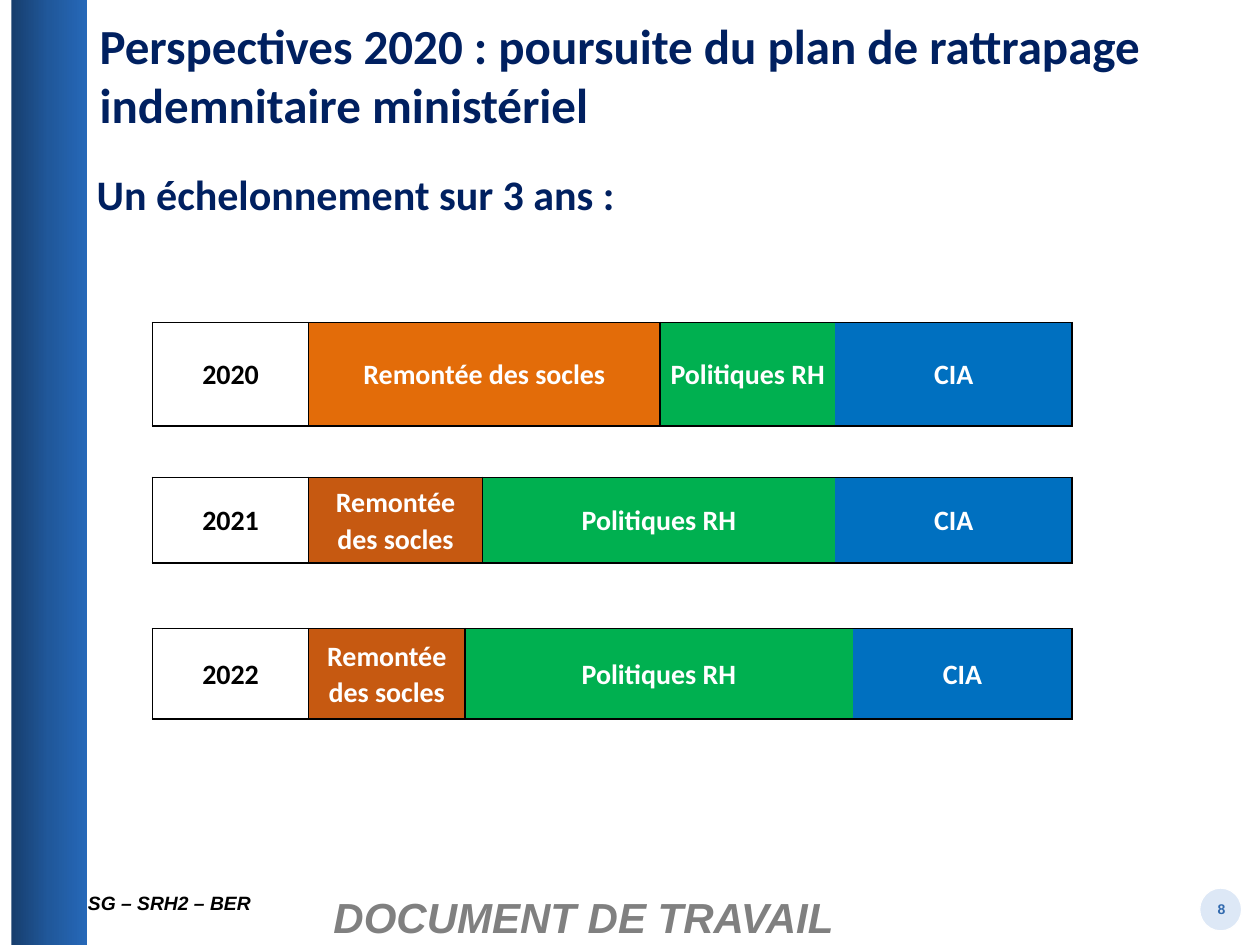
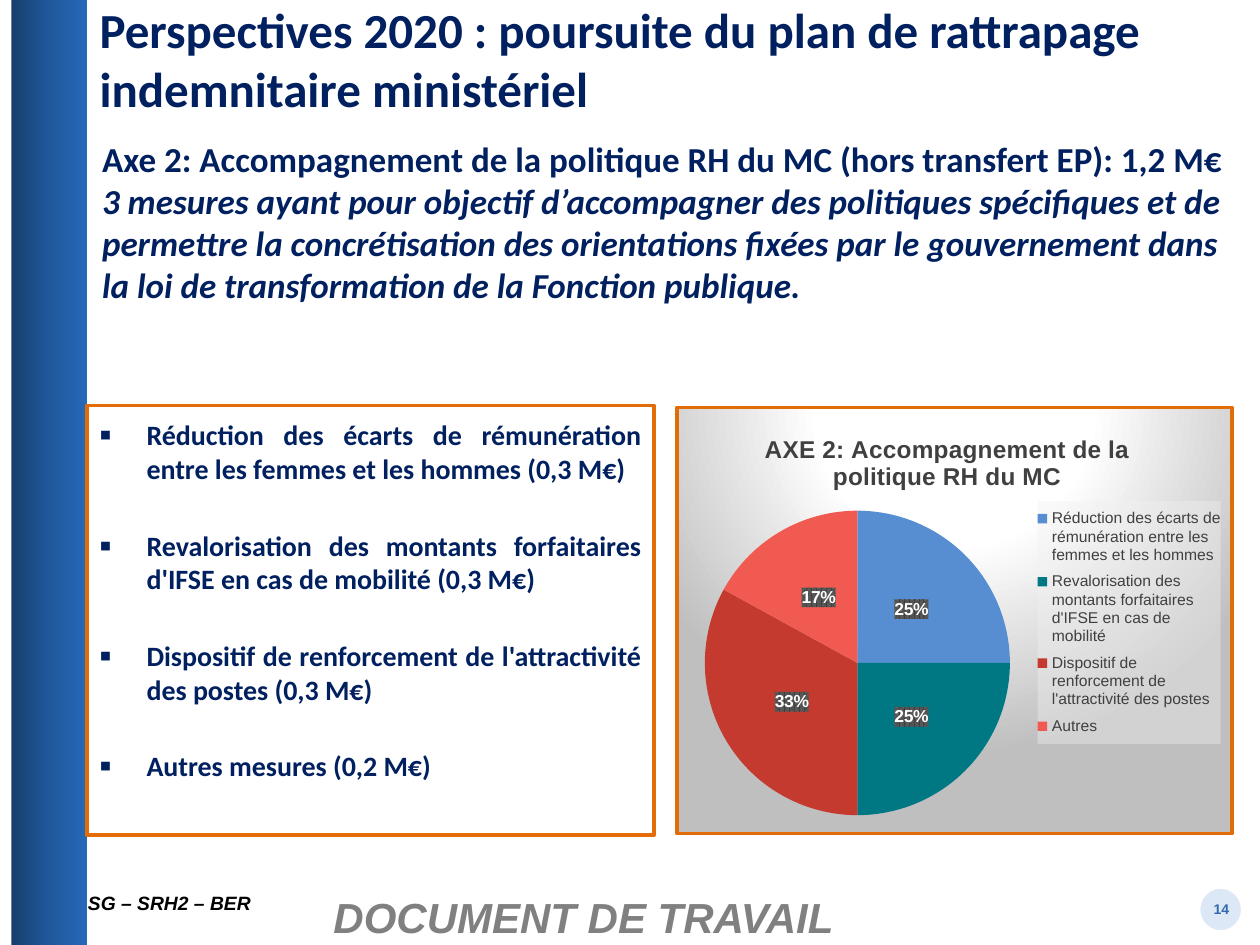
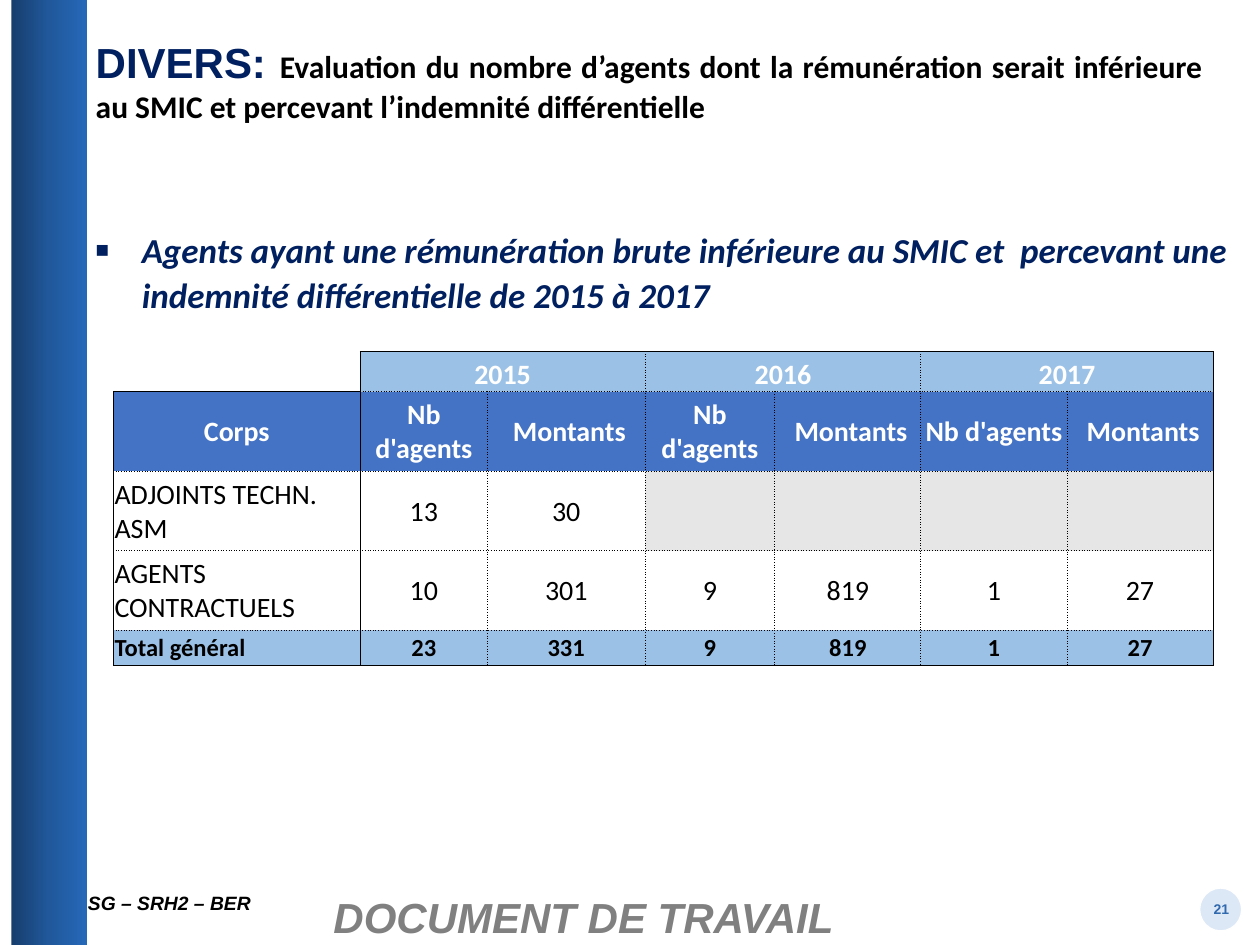
from lxml.etree import SubElement
from pptx import Presentation
from pptx.chart.data import CategoryChartData
from pptx.dml.color import RGBColor
from pptx.enum.chart import XL_CHART_TYPE, XL_LABEL_POSITION, XL_LEGEND_POSITION
from pptx.enum.shapes import MSO_SHAPE
from pptx.enum.text import MSO_ANCHOR, MSO_AUTO_SIZE, PP_ALIGN
from pptx.oxml import parse_xml
from pptx.oxml.ns import nsdecls, qn
from pptx.util import Pt

# Colours
NAVY = RGBColor(0x00, 0x20, 0x60)
BLACK = RGBColor(0x00, 0x00, 0x00)
WHITE = RGBColor(0xFF, 0xFF, 0xFF)
GREY = RGBColor(0x80, 0x80, 0x80)
DARK = RGBColor(0x40, 0x40, 0x40)
MIST = RGBColor(0xE7, 0xE6, 0xE6)
DISC = RGBColor(0xDD, 0xE8, 0xF6)
PAGE = RGBColor(0x30, 0x69, 0xAE)
ORANGE = RGBColor(0xE3, 0x6C, 0x09)
RUST = RGBColor(0xC6, 0x59, 0x11)
GREEN = RGBColor(0x00, 0xB0, 0x50)
BLUE = RGBColor(0x00, 0x70, 0xC0)
SKY = RGBColor(0x9B, 0xC2, 0xE6)
ROYAL = RGBColor(0x44, 0x72, 0xC4)
SLICES = [RGBColor(0x57, 0x8E, 0xD1), RGBColor(0x00, 0x78, 0x84),
          RGBColor(0xC4, 0x3A, 0x2F), RGBColor(0xF0, 0x5A, 0x50)]
BAND = [(0, RGBColor(0x17, 0x3E, 0x6D)), (50, RGBColor(0x20, 0x58, 0x9B)),
        (100, RGBColor(0x26, 0x68, 0xB8))]
GLOW = [(0, WHITE), (39, WHITE), (100, RGBColor(0xBF, 0xBF, 0xBF))]

PLAIN = "{2D5ABB26-0587-4C30-8999-92F81FD0307C}"
LEFT, MID, JUST = PP_ALIGN.LEFT, PP_ALIGN.CENTER, PP_ALIGN.JUSTIFY
HEAD = "Perspectives 2020 : poursuite du plan de rattrapage indemnitaire ministériel"


# Text
def write(frame, *paras, font="Calibri", size=16, color=NAVY, bold=True,
          italic=False, align=LEFT, line=None, after=0, left=0, hang=0,
          bullet=None):
    """Each paragraph is a string or a list of (text, changes) runs."""
    for i, para in enumerate(paras):
        p = frame.paragraphs[0] if i == 0 else frame.add_paragraph()
        p.alignment, p.space_before, p.space_after = align, Pt(0), Pt(after)
        if line:
            p.line_spacing = line
        runs = [(para, {})] if isinstance(para, str) else para
        for text, diff in runs:
            run = p.add_run()
            run.text = text
            look = {"font": font, "size": size, "color": color,
                    "bold": bold, "italic": italic, **diff}
            run.font.name, run.font.size = look["font"], Pt(look["size"])
            run.font.bold, run.font.italic = look["bold"], look["italic"]
            run.font.color.rgb = look["color"]
        props = p._p.get_or_add_pPr()
        props.set("marL", str(Pt(left)))
        props.set("indent", str(Pt(-hang)))
        if bullet:
            tint = SubElement(props, qn("a:buClr"))
            SubElement(tint, qn("a:srgbClr"), val=str(color))
            SubElement(props, qn("a:buSzPct"), val="125000")
            SubElement(props, qn("a:buFont"), typeface="Arial")
            SubElement(props, qn("a:buChar"), char=bullet)
        else:
            SubElement(props, qn("a:buNone"))


# XML helpers
def blend(stops, tail):
    marks = "".join(f'<a:gs pos="{pos * 1000}"><a:srgbClr val="{tone}"/></a:gs>'
                    for pos, tone in stops)
    return f'<a:gradFill {nsdecls("a")}><a:gsLst>{marks}</a:gsLst>{tail}</a:gradFill>'


def paint(node, inner):
    """Give a chart part its fill, just before its text format."""
    node.find(qn("c:txPr")).addprevious(
        parse_xml(f'<c:spPr {nsdecls("c", "a")}>{inner}</c:spPr>'))


def place(node, index, **spots):
    """Set a manual layout, in parts of the chart's size."""
    for old in node.findall(qn("c:layout")):
        node.remove(old)
    layout = parse_xml(f'<c:layout {nsdecls("c")}><c:manualLayout/></c:layout>')
    inner = layout[0]
    if "w" in spots and node.tag == qn("c:plotArea"):
        SubElement(inner, qn("c:layoutTarget"), val="inner")
    for key in "xy":
        SubElement(inner, qn(f"c:{key}Mode"), val="edge")
    for key, val in spots.items():
        SubElement(inner, qn(f"c:{key}"), val=str(val))
    node.insert(index, layout)


def edge(cell, width, **sides):
    """Draw cell borders: L, R, T, B = dash name."""
    props = cell._tc.get_or_add_tcPr()
    for side in "LRTB":
        if side in sides:
            ln = SubElement(props, qn(f"a:ln{side}"), w=str(Pt(width)))
            fill = SubElement(ln, qn("a:solidFill"))
            SubElement(fill, qn("a:srgbClr"), val=str(BLACK))
            SubElement(ln, qn("a:prstDash"), val=sides[side])


def tint(cell, color):
    if color is None:
        cell.fill.background()
    else:
        cell.fill.solid()
        cell.fill.fore_color.rgb = color


class Deck:
    def __init__(self):
        self.prs = Presentation()
        self.prs.slide_width, self.prs.slide_height = Pt(720), Pt(540)
        self.slide = None

    def start(self, layout, page):
        """Add a slide with its band and footer."""
        self.slide = self.prs.slides.add_slide(self.prs.slide_layouts[layout])
        self.shape(MSO_SHAPE.OVAL, (685.5, 507.5, 24, 24.5), DISC, WHITE, 0.75)
        num = self.text((684.5, 511, 27, 17), page, font="Arial", size=8,
                        color=PAGE, align=MID)
        num.margin_left = num.margin_right = Pt(3.6)
        band = self.shape(MSO_SHAPE.RECTANGLE, (6.5, 0, 43.2, 540))
        band.element.spPr.insert(2, parse_xml(blend(BAND, '<a:lin ang="0"/>')))
        foot = {"font": "Arial", "italic": True}
        self.text((43.2, 506, 155, 21), "SG – SRH2 – BER", size=11,
                  color=BLACK, **foot)
        self.text((183.5, 506, 385, 36), "DOCUMENT DE TRAVAIL", size=24,
                  color=GREY, **foot)

    def shape(self, kind, area, fill=None, line=None, width=1):
        item = self.slide.shapes.add_shape(kind, *map(Pt, area))
        item.shadow.inherit = False
        if fill is not None:
            item.fill.solid()
            item.fill.fore_color.rgb = fill
        if line is None:
            item.line.fill.background()
        else:
            item.line.color.rgb, item.line.width = line, Pt(width)
        return item

    def text(self, area, *paras, **fmt):
        frame = self.slide.shapes.add_textbox(*map(Pt, area)).text_frame
        frame.word_wrap = True
        write(frame, *paras, **fmt)
        return frame

    def holder(self, item, area, *paras, anchor=MSO_ANCHOR.TOP, top=3.6, **fmt):
        item.left, item.top, item.width, item.height = map(Pt, area)
        frame = item.text_frame
        frame.auto_size = MSO_AUTO_SIZE.NONE
        frame.word_wrap, frame.vertical_anchor = True, anchor
        frame.margin_top = Pt(top)
        write(frame, *paras, **fmt)

    def title(self, area, *paras, **fmt):
        self.holder(self.slide.shapes.title, area, *paras, **fmt)

    def body(self, area, *paras, **fmt):
        self.holder(self.slide.placeholders[1], area, *paras, **fmt)

    def table(self, left, top, cols, rows, pads):
        frame = self.slide.shapes.add_table(
            len(rows), len(cols), Pt(left), Pt(top), Pt(sum(cols)), Pt(sum(rows)))
        for tag in frame.element.iter(qn("a:tableStyleId")):
            tag.text = PLAIN
        grid = frame.table
        grid.first_row = grid.horz_banding = False
        for col, width in zip(grid.columns, cols):
            col.width = Pt(width)
        for row, height in zip(grid.rows, rows):
            row.height = Pt(height)
        for cell in grid.iter_cells():
            (cell.margin_left, cell.margin_right,
             cell.margin_top, cell.margin_bottom) = map(Pt, pads)
            cell.vertical_anchor = MSO_ANCHOR.MIDDLE
        return grid

    def pie(self, area, head, parts):
        data = CategoryChartData()
        data.categories = list(parts)
        data.add_series("Series 1", list(parts.values()))
        chart = self.slide.shapes.add_chart(
            XL_CHART_TYPE.PIE, *map(Pt, area), data).chart
        chart.font.name, chart.font.size = "Arial", Pt(10)
        chart.font.color.rgb = BLACK
        write(chart.chart_title.text_frame, head, font="Arial", size=14,
              color=DARK, align=MID)
        chart.chart_title.include_in_layout = False
        # Slices and labels
        plot = chart.plots[0]
        plot.vary_by_categories = True
        for i, color in enumerate(SLICES):
            fill = plot.series[0].points[i].format.fill
            fill.solid()
            fill.fore_color.rgb = color
        tags = plot.series[0].data_labels
        tags.show_percentage, tags.show_value = True, False
        tags.number_format, tags.number_format_is_linked = "0%", False
        tags.position = XL_LABEL_POSITION.CENTER
        tags.font.name, tags.font.size, tags.font.bold = "Arial", Pt(10), True
        tags.font.color.rgb = WHITE
        # Legend
        chart.has_legend = True
        key = chart.legend
        key.position, key.include_in_layout = XL_LEGEND_POSITION.RIGHT, False
        key.font.name, key.font.size = "Arial", Pt(9)
        key.font.color.rgb = DARK
        # Fills and places
        root = chart.element
        paint(root, blend(GLOW, '<a:path path="circle"><a:fillToRect l="50000" '
                          't="-80000" r="50000" b="180000"/></a:path>')
              + f'<a:ln w="{Pt(2)}"><a:solidFill><a:srgbClr val="{ORANGE}"/>'
              '</a:solidFill></a:ln>')
        paint(key.element if hasattr(key, "element") else key._element,
              '<a:solidFill><a:srgbClr val="F2F2F2"><a:alpha val="39000"/>'
              '</a:srgbClr></a:solidFill>')
        paint(next(root.iter(qn("c:dLbls"))),
              f'<a:pattFill prst="pct75"><a:fgClr><a:srgbClr val="{DARK}"/></a:fgClr>'
              '<a:bgClr><a:srgbClr val="595959"/></a:bgClr></a:pattFill>')
        place(next(root.iter(qn("c:title"))), 1, x=0.15, y=0.05)
        place(next(root.iter(qn("c:plotArea"))), 0, x=0.05, y=0.24, w=0.55, h=0.72)
        place(next(root.iter(qn("c:legend"))), 1, x=0.65, y=0.22, w=0.33, h=0.57)


def plan(deck):
    """Three-year schedule."""
    deck.start(5, "8")
    deck.title((49.7, 9, 638, 67), HEAD, size=28, anchor=MSO_ANCHOR.MIDDLE)
    deck.text((48.2, 90, 651.6, 57), "Un échelonnement sur 3 ans :", size=24,
              align=JUST, line=1.1)
    grid = deck.table(87.1, 184.3,
                      [89.3, 79.2, 7.9, 7.9, 63.4, 38.2, 8.6, 90, 8.6, 125.3],
                      [59, 29.5, 49, 37.4, 51.8], (3.6, 3.6, 0, 0))
    names = ["Remontée des socles", "Politiques RH", "CIA"]
    years = [("2020", ORANGE, (1, 5, 2, 2)), ("2021", RUST, (1, 3, 4, 2)),
             ("2022", RUST, (1, 2, 6, 1))]
    for i, (year, base, spans) in enumerate(years):
        col = 0
        fills = [None, base, GREEN, BLUE]
        for name, fill, span in zip([year] + names, fills, spans):
            cell = grid.cell(2 * i, col)
            if span > 1:
                cell.merge(grid.cell(2 * i, col + span - 1))
            sides = {"T": "solid", "B": "solid"}
            if col < 2:
                sides["L"] = "solid"
            if col == 0 or col + span == 10:
                sides["R"] = "solid"
            edge(cell, 1, **sides)
            tint(cell, fill)
            write(cell.text_frame, name, align=MID, line=1.07,
                  color=WHITE if col else BLACK)
            col += span


def axis(deck):
    """Second axis: measures and their shares."""
    deck.start(1, "14")
    deck.title((49.7, 0, 648, 67), HEAD, size=28, anchor=MSO_ANCHOR.MIDDLE)
    deck.body((46.8, 75, 662.4, 443.5), [
        ("Axe 2: Accompagnement de la politique RH du MC (hors transfert EP): 1,2 M€", {}),
        (" 3 mesures\u00a0ayant pour objectif d’accompagner des politiques spécifiques "
         "et de permettre la concrétisation des orientations fixées par le gouvernement "
         "dans la loi de transformation de la Fonction publique.", {"italic": True}),
    ], size=20, left=4.3)
    panel = deck.shape(MSO_SHAPE.RECTANGLE, (49.7, 231.8, 324, 245.5),
                       WHITE, ORANGE, 2)
    deck.holder(panel, (49.7, 231.8, 324, 245.5),
                "Réduction des écarts de rémunération entre les femmes et les hommes (0,3 M€)",
                "Revalorisation des montants forfaitaires d'IFSE en cas de mobilité (0,3 M€)",
                "Dispositif de renforcement de l'attractivité des postes (0,3 M€)",
                "Autres mesures (0,2 M€)",
                top=7, align=JUST, after=24.7, left=27, hang=27, bullet="▪")
    deck.pie((385.9, 231.8, 319, 245.5),
             "AXE 2: Accompagnement de la politique RH du MC",
             {"Réduction des écarts de rémunération entre les femmes et les hommes": 25,
              "Revalorisation des montants forfaitaires d'IFSE en cas de mobilité": 25,
              "Dispositif de renforcement de l'attractivité des postes": 33,
              "Autres": 17})


def staff(deck):
    """Staff paid below the minimum wage."""
    deck.start(1, "21")
    deck.title((47.5, 17.3, 647.3, 58.3), [
        ("DIVERS: ", {"font": "Arial", "size": 24, "color": NAVY}),
        ("Evaluation du nombre d’agents dont la rémunération serait inférieure "
         "au SMIC et percevant l’indemnité différentielle", {}),
    ], size=18, color=BLACK, align=JUST)
    deck.body((46.8, 87.8, 666.7, 440),
              "Agents ayant une rémunération brute inférieure au SMIC et  percevant "
              "une indemnité différentielle de 2015 à 2017",
              top=41, size=20, italic=True, line=1.07, left=27, hang=27, bullet="▪")
    grid = deck.table(64.8, 200.9, [141.1, 72.7, 90, 74.2, 83.5, 83.5, 83.5],
                      [23, 45.4, 45.4, 45.4, 20.2], (0.7, 0.7, 0.7, 0))
    rows = [["", "2015", "", "2016", "", "2017", ""],
            ["Corps"] + ["Nb d'agents", " Montants"] * 3,
            ["ADJOINTS TECHN. ASM", "13", "30", "", "", "", ""],
            ["AGENTS CONTRACTUELS", "10", "301", "9", "819", "1", "27"],
            ["Total général", "23", "331", "9", "819", "1", "27"]]
    fills = [SKY, ROYAL, None, None, SKY]
    for col in (1, 3, 5):
        grid.cell(0, col).merge(grid.cell(0, col + 1))
    for r, row in enumerate(rows):
        for c, word in enumerate(row):
            cell = grid.cell(r, c)
            if cell.is_spanned:
                continue
            corner = r == c == 0
            last = c + cell.span_width - 1 if cell.is_merge_origin else c
            solid = {"L": c < 2, "R": last in (0, 6),
                     "T": r == 0 or (r, c) == (1, 0), "B": r == 4 or corner}
            edge(cell, 0.5, **{side: "solid" if on else "dot"
                               for side, on in solid.items()
                               if not (corner and side in "LT")})
            blank = r == 2 and not word
            tint(cell, None if corner else MIST if blank else fills[r])
            if r == 0:
                cell.vertical_anchor = MSO_ANCHOR.BOTTOM
            if word:
                write(cell.text_frame, word, size=14 if r == 4 else 16,
                      color=WHITE if r < 2 else BLACK, bold=r not in (2, 3),
                      align=LEFT if c == 0 and r > 1 else MID)


def main():
    deck = Deck()
    plan(deck)
    axis(deck)
    staff(deck)
    deck.prs.save("out.pptx")


if __name__ == "__main__":
    main()
